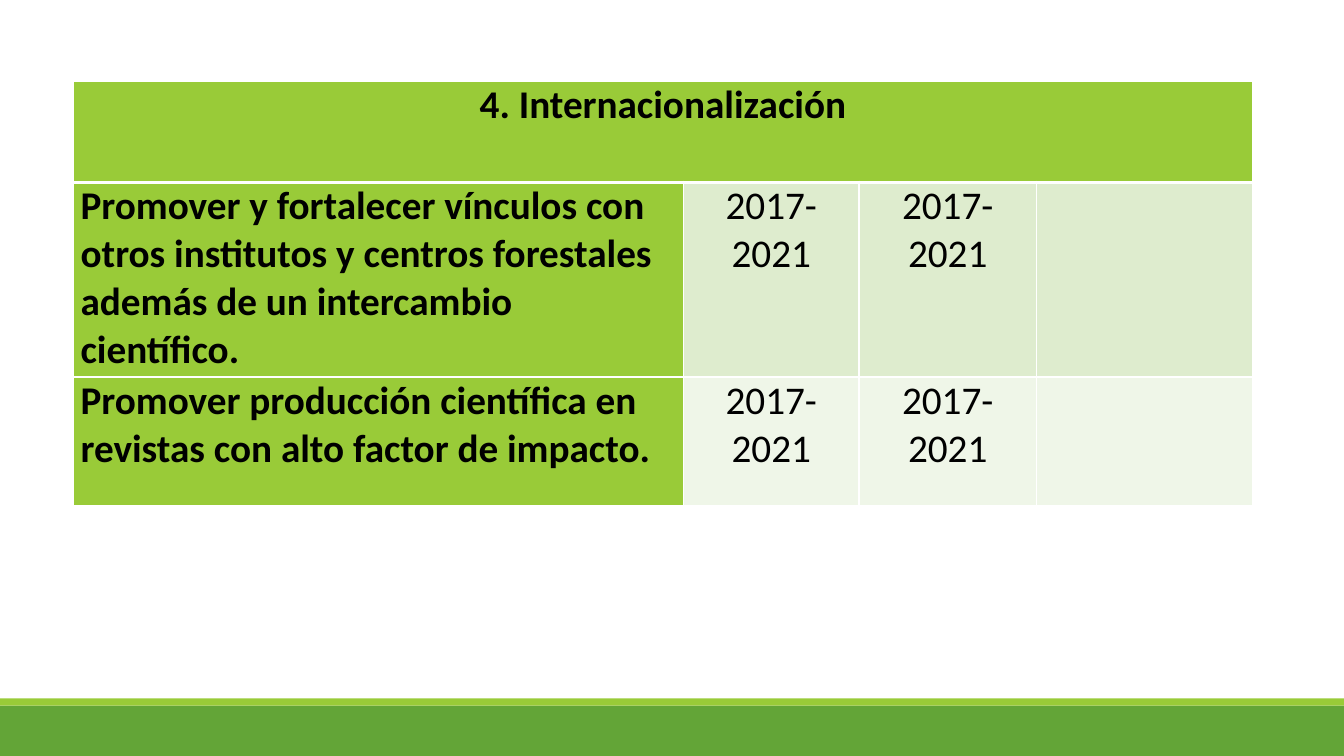
from dataclasses import dataclass

from lxml import etree
from pptx import Presentation
from pptx import util as u
from pptx.dml.color import RGBColor
from pptx.enum import shapes, text
from pptx.oxml.ns import qn


@dataclass(frozen=True)
class Theme:
    font: str = "Calibri"
    size: int = 28
    ink: str = "000000"
    lime: str = "99CB38"
    green: str = "63A537"
    rule: str = "FFFFFF"
    bands: tuple = ("DEECCE", "EFF6E8")
    thin: float = 1
    thick: float = 3


THEME = Theme()
WIDTH, HEIGHT = 13.33, 7.5
COLUMNS = (6.05, 1.74, 1.76, 2.14)
ROWS = (1, 1.93, 1.28)
HEADING = "4. Internacionalización"
GOALS = (
    ("Promover y fortalecer vínculos con otros institutos y centros forestales "
     "además de un intercambio científico.", "2017-2021", "2017-2021", ""),
    ("Promover producción científica en revistas con alto factor de impacto.",
     "2017-2021", "2017-2021", ""),
)


def paint(target, color):
    target.fill.solid()
    target.fill.fore_color.rgb = RGBColor.from_string(color)


def write(cell, words, bold=False, align=text.PP_ALIGN.LEFT):
    paragraph = cell.text_frame.paragraphs[0]
    paragraph.alignment = align
    paragraph.space_after = u.Pt(6)
    run = paragraph.add_run()
    run.text = words
    run.font.name = THEME.font
    run.font.size = u.Pt(THEME.size)
    run.font.bold = bold
    run.font.color.rgb = RGBColor.from_string(THEME.ink)


def set_borders(cell, top, bottom):
    """Rule all four sides; the schema wants the lines before the fill."""
    properties = cell._tc.get_or_add_tcPr()
    sides = {"a:lnL": THEME.thin, "a:lnR": THEME.thin, "a:lnT": top, "a:lnB": bottom}
    for position, (side, width) in enumerate(sides.items()):
        line = etree.Element(qn(side), w=str(u.Pt(width)))
        fill = etree.SubElement(line, qn("a:solidFill"))
        etree.SubElement(fill, qn("a:srgbClr"), val=THEME.rule)
        properties.insert(position, line)


def format_cell(cell, row, color):
    cell.margin_left = cell.margin_right = u.Inches(0.07)
    cell.margin_top = cell.margin_bottom = 0
    paint(cell, color)
    set_borders(cell, top=THEME.thick if row == 1 else THEME.thin,
                bottom=THEME.thick if row == 0 else THEME.thin)


def add_goals_table(slide, left, top):
    box = [u.Inches(v) for v in (left, top, sum(COLUMNS), sum(ROWS))]
    table = slide.shapes.add_table(len(ROWS), len(COLUMNS), *box).table
    for column, width in zip(table.columns, COLUMNS):
        column.width = u.Inches(width)
    for row, height in zip(table.rows, ROWS):
        row.height = u.Inches(height)

    for column in range(len(COLUMNS)):
        format_cell(table.cell(0, column), 0, THEME.lime)
    heading = table.cell(0, 0)
    heading.merge(table.cell(0, len(COLUMNS) - 1))
    write(heading, HEADING, bold=True, align=text.PP_ALIGN.CENTER)

    for row, (goal, band) in enumerate(zip(GOALS, THEME.bands), start=1):
        for column, words in enumerate(goal):
            cell = table.cell(row, column)
            is_goal = column == 0
            format_cell(cell, row, THEME.lime if is_goal else band)
            if words:
                write(cell, words, bold=is_goal,
                      align=text.PP_ALIGN.LEFT if is_goal else text.PP_ALIGN.CENTER)


def add_footer(slide, top, stripe):
    """Full-width band down to the slide's foot, with a thin stripe above it."""
    for y, height, color in ((top, HEIGHT - top, THEME.green),
                             (top - stripe, stripe, THEME.lime)):
        bar = slide.shapes.add_shape(shapes.MSO_SHAPE.RECTANGLE, 0, u.Inches(y),
                                     u.Inches(WIDTH), u.Inches(height))
        bar.shadow.inherit = False
        bar.line.fill.background()
        paint(bar, color)


def main():
    presentation = Presentation()
    presentation.slide_width = u.Inches(WIDTH)
    presentation.slide_height = u.Inches(HEIGHT)
    blank_layout = presentation.slide_layouts[6]
    slide = presentation.slides.add_slide(blank_layout)
    add_footer(slide, top=7, stripe=0.07)
    add_goals_table(slide, left=0.73, top=0.81)
    presentation.save("out.pptx")


if __name__ == "__main__":
    main()
